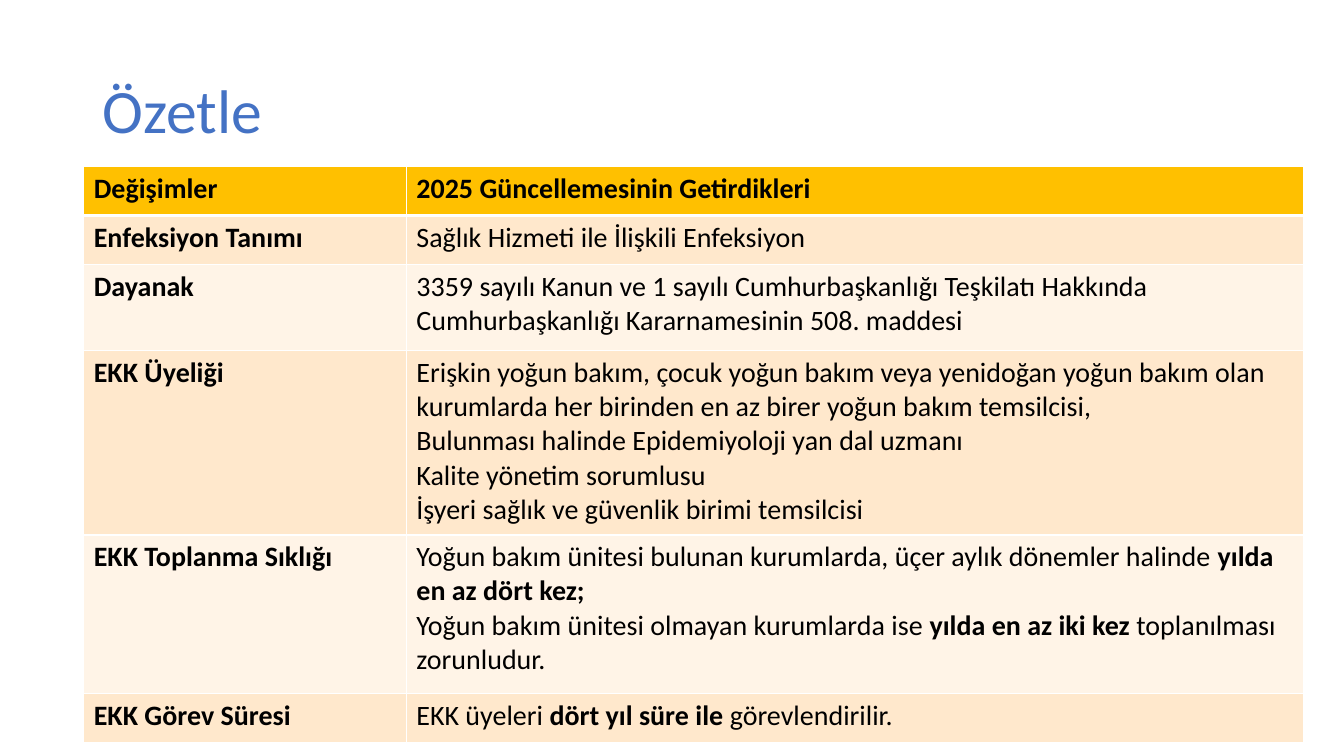
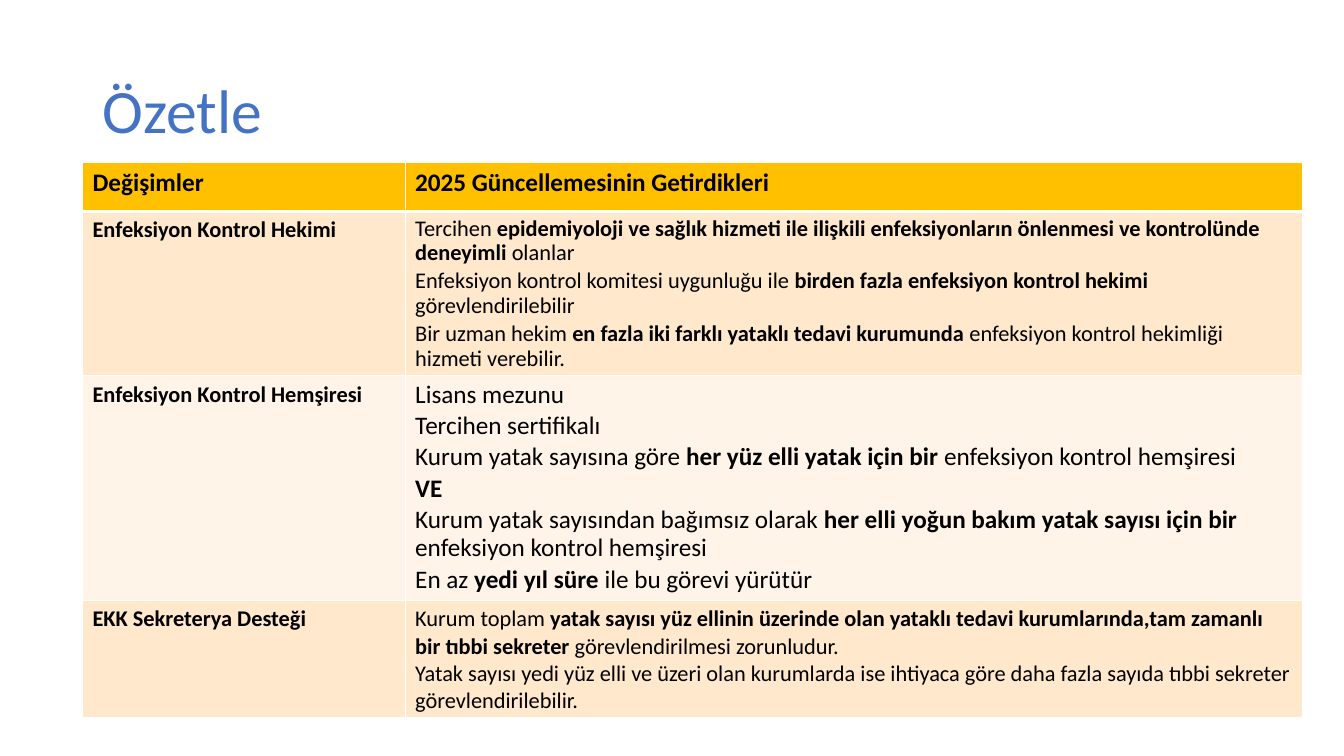
import pptx
import pptx.util
import pptx.dml.color
import pptx.enum.text
import pptx.oxml
import pptx.oxml.ns

Cm = pptx.util.Cm
Pt = pptx.util.Pt

COLORS = {
    "title": "4472C4",
    "text": "000000",
    "header": "FFC000",
    "band_dark": "FFE8CC",
    "band_light": "FFF4E7",
    "border": "FFFFFF",
}
FONT = "Calibri"
TITLE = "Özetle"
TITLE_BOX = (2.34, 1.02, 29.21, 3.68)
COL_WIDTHS = (8.13, 22.61)
HEADER = ("Değişimler", "2025 Güncellemesinin Getirdikleri")
HEADER_HEIGHT = 1.24

SUMMARY_ROWS = [
    (1.24, 20, "Enfeksiyon Tanımı", ["Sağlık Hizmeti ile İlişkili Enfeksiyon"], False),
    (2.16, 20, "Dayanak", [
        "3359 sayılı Kanun ve 1 sayılı Cumhurbaşkanlığı Teşkilatı Hakkında "
        "Cumhurbaşkanlığı Kararnamesinin 508. maddesi",
    ], False),
    (4.65, 20, "EKK Üyeliği", [
        "Erişkin yoğun bakım, çocuk yoğun bakım veya yenidoğan yoğun bakım olan "
        "kurumlarda her birinden en az birer yoğun bakım temsilcisi,",
        "Bulunması halinde Epidemiyoloji yan dal uzmanı",
        "Kalite yönetim sorumlusu",
        "İşyeri sağlık ve güvenlik birimi temsilcisi",
    ], False),
    (3.99, 20, "EKK Toplanma Sıklığı", [
        "Yoğun bakım ünitesi bulunan kurumlarda, üçer aylık dönemler halinde "
        "**yılda en az dört kez;**",
        "Yoğun bakım ünitesi olmayan kurumlarda ise **yılda en az iki kez **"
        "toplanılması zorunludur.",
    ], False),
    (1.24, 20, "EKK Görev Süresi", [
        "EKK üyeleri **dört yıl süre ile **görevlendirilir.",
    ], False),
]

STAFF_ROWS = [
    (4.14, 16, "Enfeksiyon Kontrol Hekimi", [
        "Tercihen **epidemiyoloji ve sağlık hizmeti ile ilişkili enfeksiyonların "
        "önlenmesi ve kontrolünde deneyimli **olanlar",
        "Enfeksiyon kontrol komitesi uygunluğu ile **birden fazla enfeksiyon "
        "kontrol hekimi **görevlendirilebilir",
        "Bir uzman hekim **en fazla iki farklı yataklı tedavi kurumunda** "
        "enfeksiyon kontrol hekimliği hizmeti verebilir.",
    ], True),
    (5.66, 18, "Enfeksiyon Kontrol Hemşiresi", [
        "Lisans mezunu",
        "Tercihen sertifikalı",
        "Kurum yatak sayısına göre **her yüz elli yatak için bir **"
        "enfeksiyon kontrol hemşiresi",
        "**VE**",
        "Kurum yatak sayısından bağımsız olarak **her elli yoğun bakım yatak "
        "sayısı için bir **enfeksiyon kontrol hemşiresi",
        "En az **yedi yıl süre **ile bu görevi yürütür",
    ], True),
    (2.95, 16, "EKK Sekreterya Desteği", [
        "Kurum toplam **yatak sayısı yüz ellinin üzerinde olan yataklı tedavi "
        "kurumlarında,tam zamanlı bir tıbbi sekreter **görevlendirilmesi zorunludur.",
        "Yatak sayısı yedi yüz elli ve üzeri olan kurumlarda ise ihtiyaca göre "
        "daha fazla sayıda tıbbi sekreter görevlendirilebilir.",
    ], False),
]


def rgb(name):
    return pptx.dml.color.RGBColor.from_string(COLORS[name])


def write(tf, paragraphs, size, color="text", bold=False, line=None, after=None):
    for i, text in enumerate(paragraphs):
        p = tf.paragraphs[0] if i == 0 else tf.add_paragraph()
        if line:
            p.line_spacing = line
        if after:
            p.space_after = Pt(after)
        for j, part in enumerate(text.split("**")):
            if part:
                r = p.add_run()
                r.text = part
                r.font.name = FONT
                r.font.size = Pt(size)
                r.font.bold = bold or j % 2 == 1
                r.font.color.rgb = rgb(color)


def set_borders(cell, top, bottom):
    tc_pr = cell._tc.get_or_add_tcPr()
    for side, width in (("L", 1), ("R", 1), ("T", top), ("B", bottom)):
        tc_pr.append(pptx.oxml.parse_xml(
            f'<a:ln{side} {pptx.oxml.ns.nsdecls("a")} w="{Pt(width)}">'
            f'<a:solidFill><a:srgbClr val="{COLORS["border"]}"/></a:solidFill>'
            f'</a:ln{side}>'))


def fill_cell(cell, paragraphs, size, fill, top=1, bottom=1, **fmt):
    set_borders(cell, top, bottom)
    cell.fill.solid()
    cell.fill.fore_color.rgb = rgb(fill)
    write(cell.text_frame, paragraphs, size, **fmt)


def add_title(s, box):
    tf = s.shapes.add_textbox(*map(Cm, box)).text_frame
    tf.word_wrap = True
    tf.vertical_anchor = pptx.enum.text.MSO_ANCHOR.MIDDLE
    write(tf, [TITLE], 44, color="title", line=0.9)


def add_changes_table(s, left, top, rows, header_size, label_size):
    heights = [HEADER_HEIGHT] + [row[0] for row in rows]
    table = s.shapes.add_table(
        len(heights), len(COL_WIDTHS), Cm(left), Cm(top),
        Cm(sum(COL_WIDTHS)), Cm(sum(heights))).table
    table.horz_banding = False
    for col, width in zip(table.columns, COL_WIDTHS):
        col.width = Cm(width)
    for row, height in zip(table.rows, heights):
        row.height = Cm(height)
    for i, text in enumerate(HEADER):
        fill_cell(table.cell(0, i), [text], header_size, "header", bottom=3, bold=True)
    for i, (_, size, label, body, spaced) in enumerate(rows, 1):
        fill = "band_dark" if i % 2 else "band_light"
        edge = 3 if i == 1 else 1
        spacing = {"line": 0.9, "after": round(size * 0.15, 1)} if spaced else {}
        fill_cell(table.cell(i, 0), [label], label_size, fill, top=edge, bold=True)
        fill_cell(table.cell(i, 1), body, size, fill, top=edge, **spacing)


def add_summary_slide(prs, left, top, rows, header_size, label_size):
    s = prs.slides.add_slide(prs.slide_layouts[6])
    add_title(s, TITLE_BOX)
    add_changes_table(s, left, top, rows, header_size, label_size)


def main():
    prs = pptx.Presentation()
    prs.slide_width = Cm(33.87)
    prs.slide_height = Cm(19.05)
    add_summary_slide(prs, 2.11, 4.19, SUMMARY_ROWS, 20, 20)
    add_summary_slide(prs, 2.08, 4.09, STAFF_ROWS, 18, 16)
    prs.save("out.pptx")


if __name__ == "__main__":
    main()
